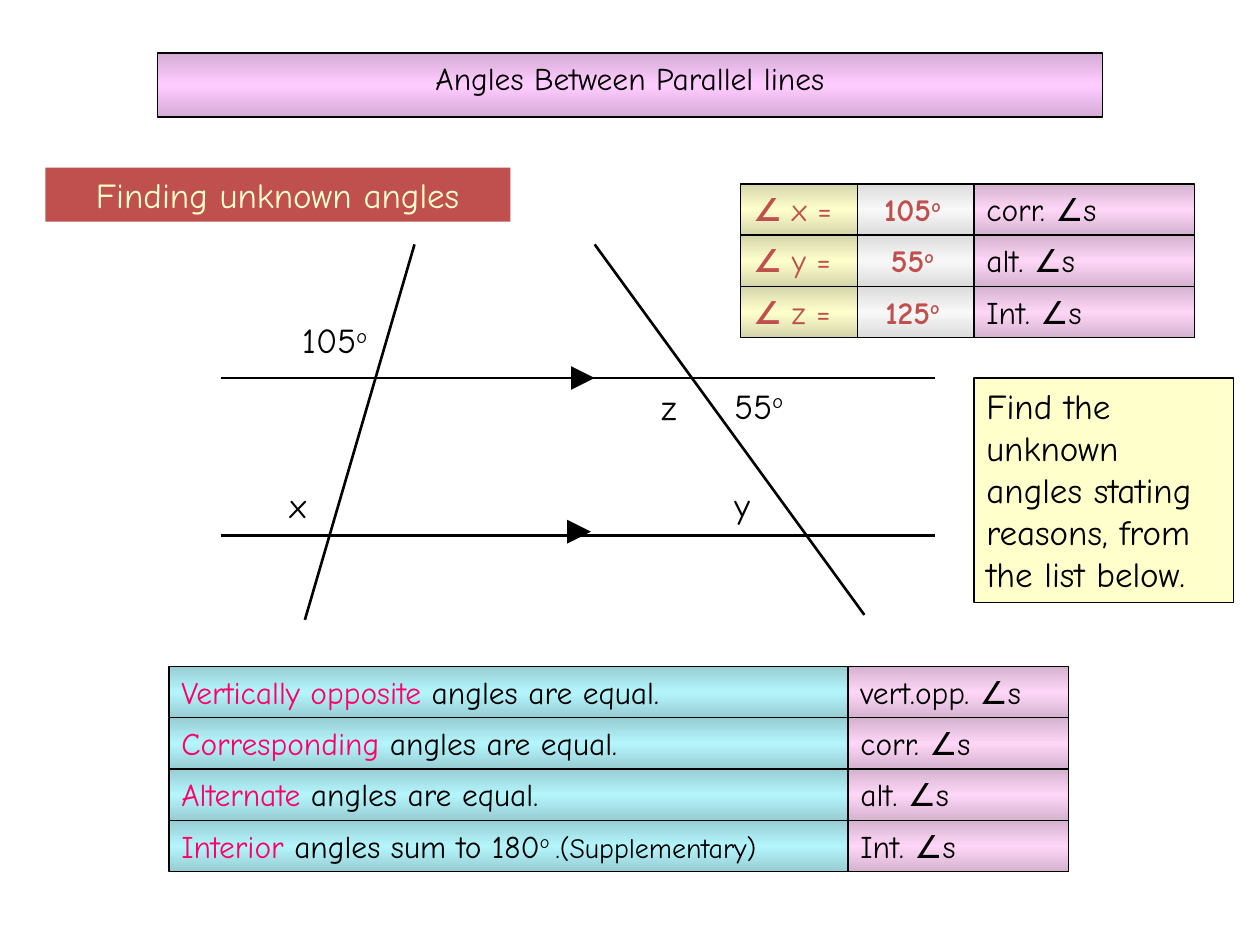
import copy
from dataclasses import dataclass

import pptx
import pptx.dml.color
import pptx.enum.shapes
import pptx.enum.text
import pptx.oxml
import pptx.oxml.ns
import pptx.util


@dataclass(frozen=True)
class Theme:
    font: str = "Comic Neue"
    small: int = 16
    body: int = 18
    large: int = 20
    black: str = "000000"
    red: str = "C0504D"
    pink: str = "FF0066"
    cream: str = "FFFFCC"
    # Gradients run from edge to middle and back to edge
    title: tuple = ("D5ABD5", "FFCCFF")
    rule: tuple = ("97CDD3", "B4F5FC")
    reason: tuple = ("D4B3CF", "FED6F7")
    angle: tuple = ("D5D5AB", "FFFFCC")
    value: tuple = ("DCDCDC", "F8F8F8")


theme = Theme()
rgb = pptx.dml.color.RGBColor.from_string
qn = pptx.oxml.ns.qn

deck = pptx.Presentation()
deck.slide_width = pptx.util.Inches(10)
deck.slide_height = pptx.util.Inches(7.5)
page = deck.slides.add_slide(deck.slide_layouts[6])

# The page is a grid of 100 columns by 75 rows
COLUMN = deck.slide_width / 100
ROW = deck.slide_height / 75


def add_box(place, spans, fill=None, outline=True, color=theme.black,
            size=theme.body, centred=False):
    """Add a text rectangle; spans are (text, options) pairs, and fill is a colour or a gradient."""
    left, top, width, height = place
    box = page.shapes.add_shape(
        pptx.enum.shapes.MSO_SHAPE.RECTANGLE,
        round(left * COLUMN), round(top * ROW), round(width * COLUMN), round(height * ROW))
    box.shadow.inherit = False
    if fill is None:
        box.fill.background()
    elif isinstance(fill, str):
        box.fill.solid()
        box.fill.fore_color.rgb = rgb(fill)
    else:
        box.fill.gradient()
        box.fill.gradient_angle = 90
        for stop, stop_color, position in zip(box.fill.gradient_stops, fill, (0, 0.5)):
            stop.color.rgb = rgb(stop_color)
            stop.position = position
        stops = box._element.spPr.find(".//" + qn("a:gsLst"))
        last_stop = copy.deepcopy(stops[0])
        last_stop.set("pos", "100000")
        stops.append(last_stop)
    if fill is not None and outline:
        box.line.color.rgb = rgb(theme.black)
        box.line.width = pptx.util.Pt(0.75)
    else:
        box.line.fill.background()

    frame = box.text_frame
    frame.word_wrap = True
    frame.vertical_anchor = pptx.enum.text.MSO_ANCHOR.TOP
    para = frame.paragraphs[0]
    align = pptx.enum.text.PP_ALIGN
    para.alignment = align.CENTER if centred else align.LEFT
    para.font.name = theme.font
    para.font.size = pptx.util.Pt(size)
    para.font.color.rgb = rgb(color)
    for text, options in spans:
        span = para.add_run()
        span.text = text
        if "color" in options:
            span.font.color.rgb = rgb(options["color"])
        if "size" in options:
            span.font.size = pptx.util.Pt(options["size"])
        if "bold" in options:
            span.font.bold = options["bold"]
        if "raised" in options:
            span._r.get_or_add_rPr().set("baseline", "30000")


def add_line(start, end, width=1.5, arrow=False):
    line = page.shapes.add_connector(
        pptx.enum.shapes.MSO_CONNECTOR.STRAIGHT,
        round(start[0] * COLUMN), round(start[1] * ROW),
        round(end[0] * COLUMN), round(end[1] * ROW))
    line.line.color.rgb = rgb(theme.black)
    line.line.width = pptx.util.Pt(width)
    if arrow:
        head = pptx.oxml.parse_xml(f'<a:tailEnd {pptx.oxml.ns.nsdecls("a")} type="triangle"/>')
        line.line._get_or_add_ln().append(head)
    line._element.spPr.append(
        pptx.oxml.parse_xml(f'<a:effectLst {pptx.oxml.ns.nsdecls("a")}/>'))


# Headings and task
add_box((12.5, 4.2, 75, 5.1), [("Angles Between Parallel lines", {})], theme.title, centred=True)
add_box((3.6, 13.3, 36.9, 4.3), [("Finding unknown angles", {})], theme.red,
        outline=False, color=theme.cream, size=theme.large, centred=True)
add_box((77.3, 30, 20.6, 17.8),
        [("Find the unknown angles stating reasons, from the list below.", {})],
        theme.cream, size=theme.large)

# Parallel lines with their arrows, then the two transversals
for line_row, arrow_column, arrow_row in ((30, 45.5, 30), (42.5, 45.2, 42.2)):
    add_line((17.5, line_row), (74.2, line_row))
    add_line((arrow_column, arrow_row), (arrow_column + 1.7, arrow_row), width=4.5, arrow=True)
add_line((24.2, 49.2), (32.9, 19.4))
add_line((47.2, 19.4), (68.6, 48.8))

# Angle labels
degree = ("o", {"raised": True})
for left, top, width, spans in (
    (23, 24.8, 9.9, [("105", {}), degree]),
    (57.3, 30, 9.9, [("55", {}), degree]),
    (22, 37.9, 4.3, [("x", {})]),
    (57.3, 37.9, 4.3, [("y", {})]),
    (51.5, 30.1, 4.3, [("z", {})]),
):
    add_box((left, top, width, 4.3), spans, size=theme.large)

# Both grids share a row height and the width of the reason column
CELL_HEIGHT = 4.07
REASON_WIDTH = 17.5
degree_in_cell = ("o ", {"raised": True})

# Answers
for index, (name, value, reason) in enumerate((
    ("x", "105", "corr. ∠s"),
    ("y", "55", "alt. ∠s"),
    ("z", "125", "Int. ∠s"),
)):
    top = 14.6 + index * CELL_HEIGHT
    add_box((58.8, top, 9.25, CELL_HEIGHT), [("∠", {"bold": True}), (f" {name} =", {})],
            theme.angle, color=theme.red)
    add_box((68.05, top, 9.25, CELL_HEIGHT),
            [(value, {"bold": True}), ("o ", {"raised": True, "bold": True})],
            theme.value, color=theme.red, centred=True)
    add_box((77.3, top, REASON_WIDTH, CELL_HEIGHT), [(reason, {})], theme.reason)

# Rules to choose from
for index, (term, statement, reason) in enumerate((
    ("Vertically opposite", [(" angles are equal.", {})], "vert.opp. ∠s"),
    ("Corresponding", [(" angles are equal.", {})], "corr. ∠s"),
    ("Alternate ", [("angles are equal.", {})], "alt. ∠s"),
    ("Interior ", [("angles sum to 180", {}), degree_in_cell,
                   (".(Supplementary)", {"size": theme.small})], "Int. ∠s"),
)):
    top = 52.9 + index * CELL_HEIGHT
    add_box((13.4, top, 53.9, CELL_HEIGHT), [(term, {"color": theme.pink}), *statement], theme.rule)
    add_box((67.3, top, REASON_WIDTH, CELL_HEIGHT), [(reason, {})], theme.reason)

deck.save("out.pptx")
